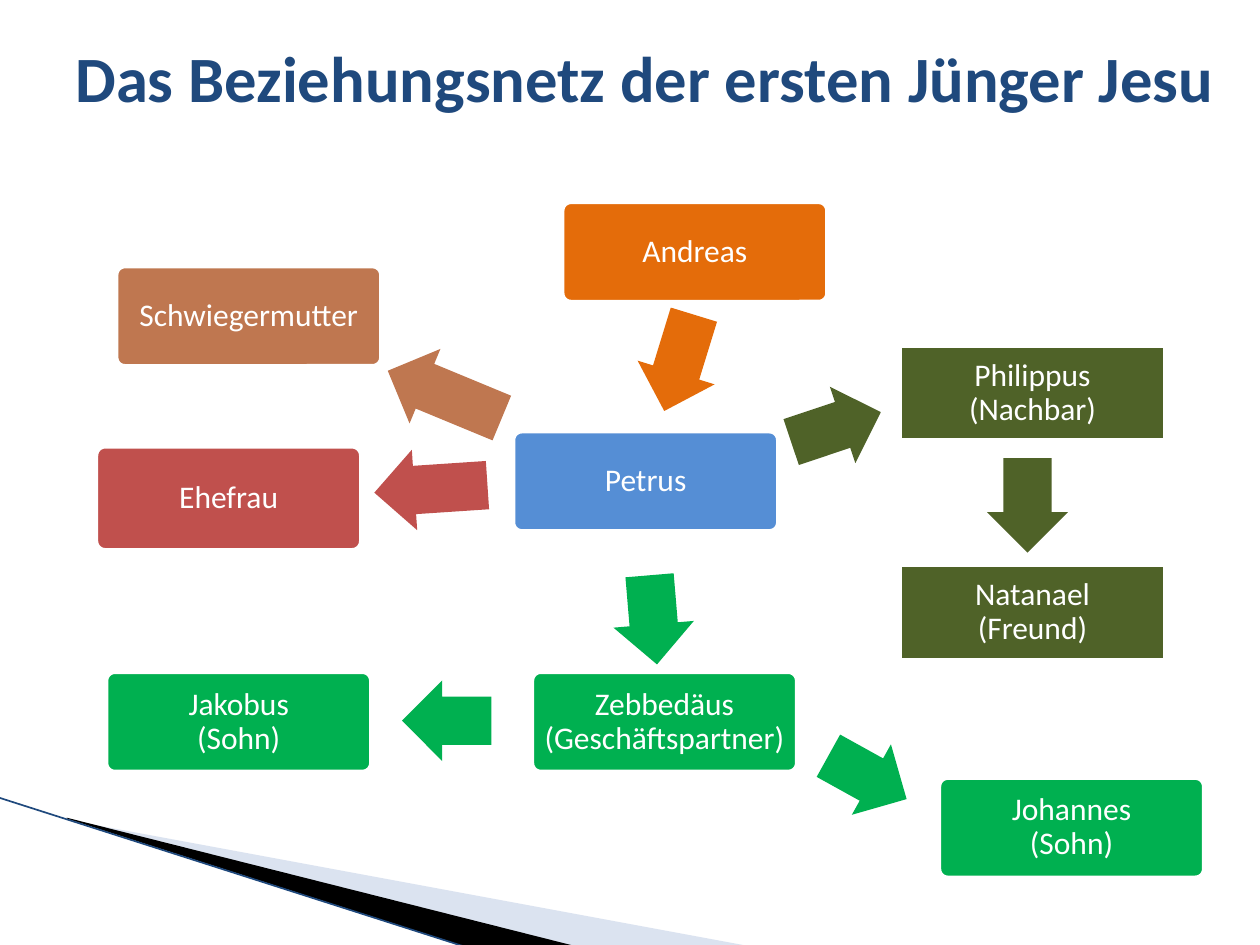
from lxml import etree
from pptx import Presentation
from pptx.dml.color import RGBColor
from pptx.enum.shapes import MSO_CONNECTOR, MSO_SHAPE
from pptx.enum.text import MSO_ANCHOR, PP_ALIGN
from pptx.oxml.ns import qn
from pptx.util import Inches, Pt

ROUNDED, RECT, ARROW = MSO_SHAPE.ROUNDED_RECTANGLE, MSO_SHAPE.RECTANGLE, MSO_SHAPE.LEFT_ARROW
STRAIGHT = MSO_CONNECTOR.STRAIGHT
MIDDLE, LEFT, CENTER = MSO_ANCHOR.MIDDLE, PP_ALIGN.LEFT, PP_ALIGN.CENTER

WHITE = RGBColor(0xFF, 0xFF, 0xFF)
BLACK = RGBColor(0x00, 0x00, 0x00)
NAVY = RGBColor(0x1F, 0x49, 0x7D)
PALE = RGBColor(0xA7, 0xB9, 0xDB)
OLIVE = RGBColor(0x4F, 0x62, 0x28)
GREEN = RGBColor(0x00, 0xB0, 0x50)
ORANGE = RGBColor(0xE4, 0x6C, 0x0A)
BROWN = RGBColor(0xBF, 0x77, 0x50)
RED = RGBColor(0xC0, 0x50, 0x4D)
BLUE = RGBColor(0x55, 0x8E, 0xD5)

# Positions and sizes below are percent of the slide's width and height.
TITLE = "Das Beziehungsnetz der ersten Jünger Jesu"
TITLE_AREA = (5, 4, 95, 8.13)
TITLE_FONT = {"name": "Calibri", "size": Pt(36.9), "bold": True}
BOX_FONT = {"name": "Calibri", "size": Pt(18)}
BOX_W, ARROW_H = 21.3, 8.53

PEOPLE = [
    ("Natanael\n(Freund)", RECT, OLIVE, 71.3, 59.6, 10.4),
    ("Johannes\n(Sohn)", ROUNDED, GREEN, 74.4, 82.13, 10.93),
    ("Jakobus\n(Sohn)", ROUNDED, GREEN, 8.3, 70.93, 10.93),
    ("Andreas", ROUNDED, ORANGE, 44.5, 21.2, 10.93),
    ("Schwiegermutter", ROUNDED, BROWN, 9.1, 28, 10.93),
    ("Ehefrau", ROUNDED, RED, 7.5, 47.07, 11.33),
    ("Philippus\n(Nachbar)", RECT, OLIVE, 71.3, 36.4, 10.4),
    ("Zebbedäus\n(Geschäftspartner)", ROUNDED, GREEN, 42.1, 70.93, 10.93),
    ("Petrus", ROUNDED, BLUE, 40.6, 45.47, 10.93),
]
ARROWS = [
    (OLIVE, 62.6, 40.93, 7.5, 161.5),
    (GREEN, 65.3, 78, 7.1, 209),
    (GREEN, 31.9, 72, 7.1, 0),
    (ORANGE, 49.9, 34.13, 8, 287.1),
    (BROWN, 30.4, 37.47, 9.8, 22.5),
    (RED, 29.7, 47.47, 9, 356.2),
    (GREEN, 48.3, 61.33, 7.1, 265.2),
    (OLIVE, 77.8, 49.2, 7.5, 270),
]
WEDGES = [
    (PALE, 40, [(5.5, 86.8), (59.5, 100.13), (45.6, 100.13), (5.5, 86.67)]),
    (BLACK, 100, [(5.3, 86.53), (45.7, 100.13), (37.2, 100.27), (5.4, 86.67)]),
]
EDGE = (-0.1, 84.4, 37.1, 100.27)

prs = Presentation()
prs.slide_width, prs.slide_height = Inches(10), Inches(7.5)
s = prs.slides.add_slide(prs.slide_layouts[6])


def place(x, y, *size):
    shares = (x, y, *size)
    sides = (prs.slide_width, prs.slide_height) * 2
    return [round(side * share / 100) for side, share in zip(sides, shares)]


def paint(sp, color):
    sp.shadow.inherit = False
    sp.fill.solid()
    sp.fill.fore_color.rgb = color
    sp.line.fill.background()


def write(sp, text, font, color, align, inset):
    tf = sp.text_frame
    frame = {"word_wrap": True, "vertical_anchor": MIDDLE}
    frame.update({f"margin_{side}": Inches(inset) for side in ("left", "right", "top", "bottom")})
    for name, value in frame.items():
        setattr(tf, name, value)
    p = tf.paragraphs[0]
    p.text = text
    p.alignment = align
    for r in p.runs:
        for name, value in font.items():
            setattr(r.font, name, value)
        r.font.color.rgb = color
    return p


for color, opacity, points in WEDGES:
    corners = [place(*point) for point in points]
    fb = s.shapes.build_freeform(*corners[0])
    fb.add_line_segments(corners[1:], close=True)
    sp = fb.convert_to_shape()
    paint(sp, color)
    if opacity < 100:
        clr = sp.fill._xPr.find(qn("a:solidFill"))[0]
        etree.SubElement(clr, qn("a:alpha"), val=str(opacity * 1000))

edge = s.shapes.add_connector(STRAIGHT, *place(*EDGE))
edge.line.color.rgb = NAVY
edge.line.width = Pt(0.95)
etree.SubElement(edge._element.spPr, qn("a:effectLst"))

write(s.shapes.add_textbox(*place(*TITLE_AREA)), TITLE, TITLE_FONT, NAVY, LEFT, 0.1)

for color, x, y, w, angle in ARROWS:
    sp = s.shapes.add_shape(ARROW, *place(x, y, w, ARROW_H))
    paint(sp, color)
    sp.adjustments[0], sp.adjustments[1] = 0.6, 0.5
    sp.rotation = angle

for text, kind, color, x, y, h in PEOPLE:
    sp = s.shapes.add_shape(kind, *place(x, y, BOX_W, h))
    paint(sp, color)
    sp.line.color.rgb = WHITE
    sp.line.width = Pt(4.33)
    if kind == ROUNDED:
        sp.adjustments[0] = 0.1
    write(sp, text, BOX_FONT, WHITE, CENTER, 0.04).line_spacing = 0.9

prs.save("out.pptx")
